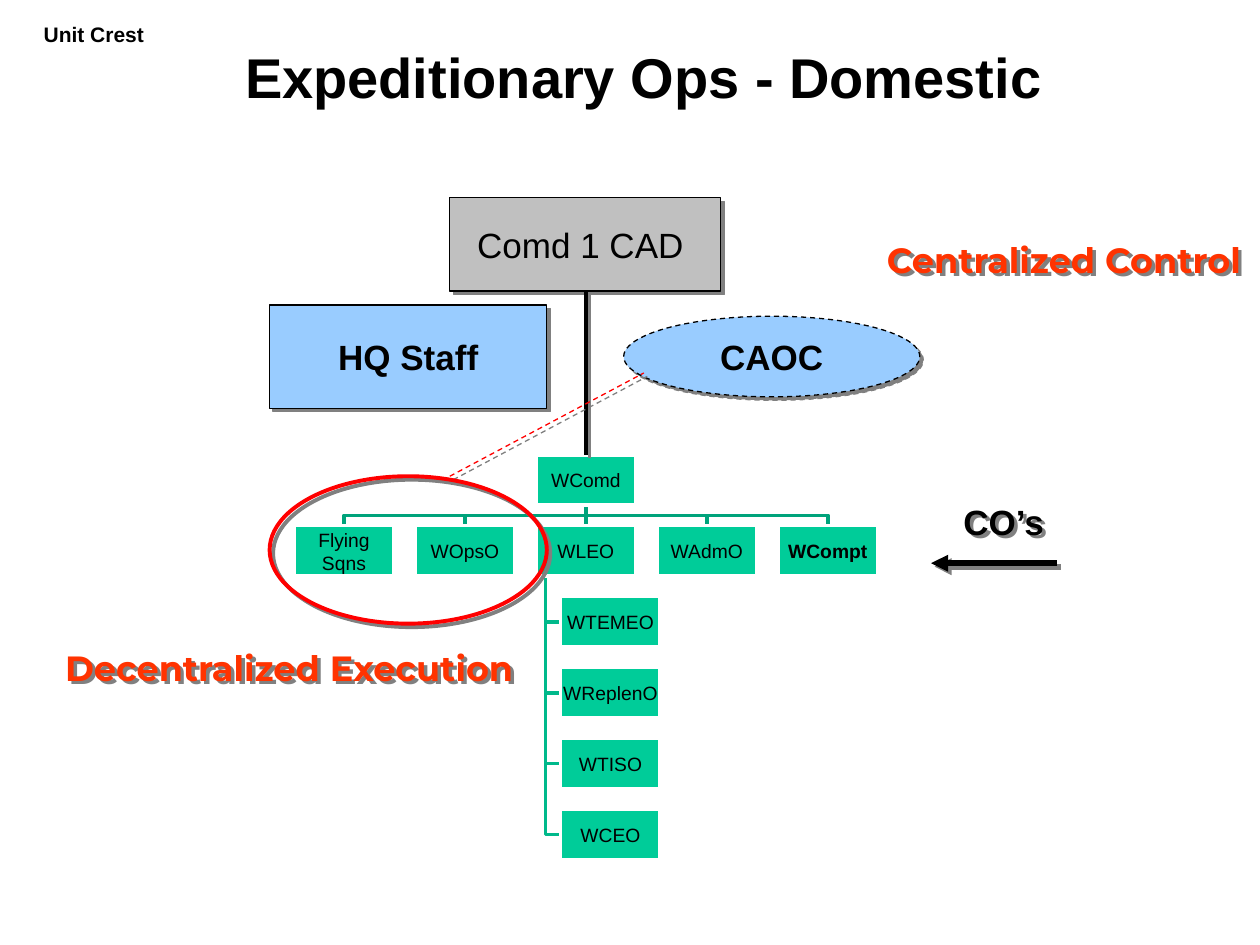
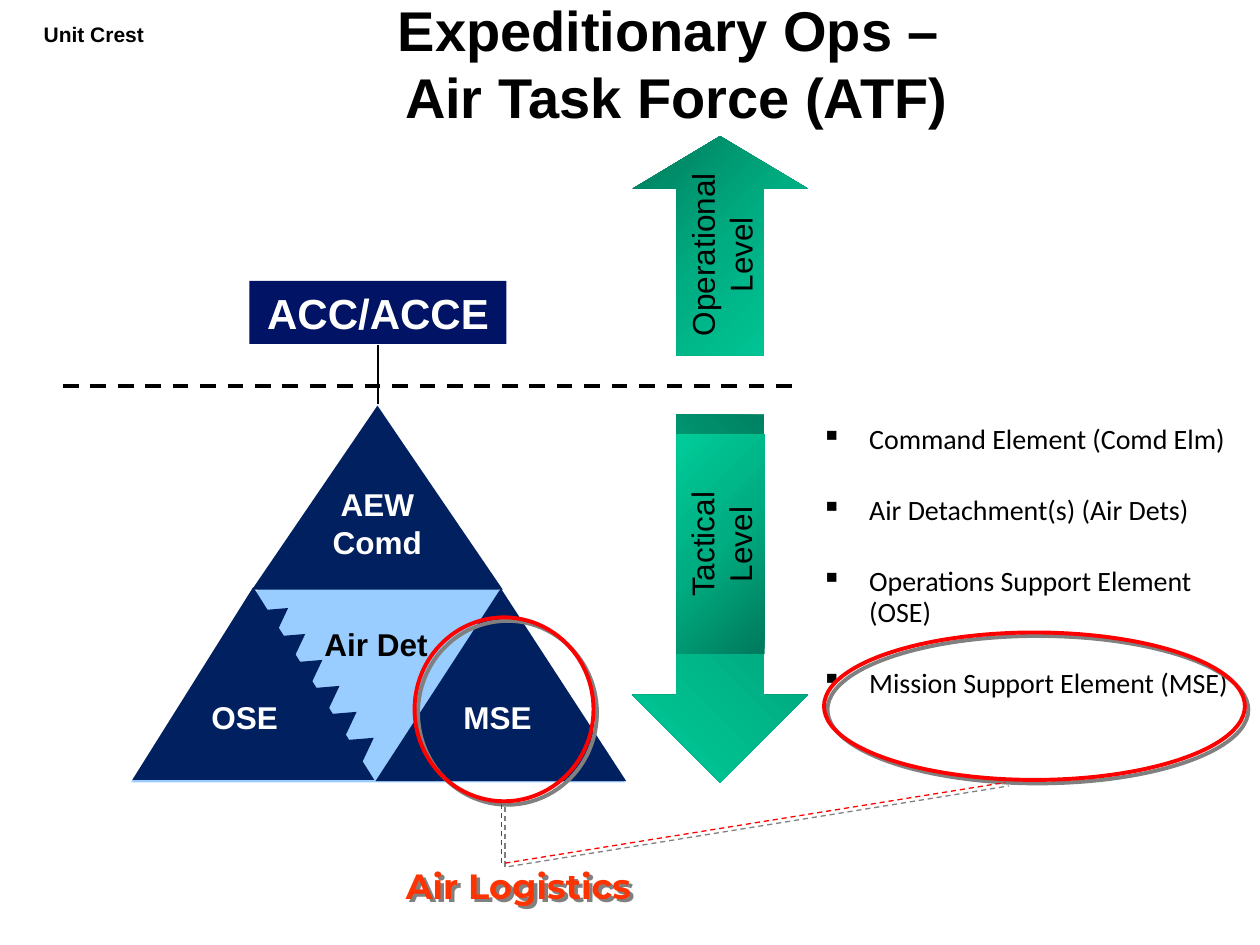
from copy import deepcopy
from dataclasses import dataclass

from lxml import etree
from pptx import Presentation
from pptx.dml.color import RGBColor
from pptx.enum.dml import MSO_LINE
from pptx.enum.shapes import MSO_CONNECTOR, MSO_SHAPE
from pptx.enum.text import MSO_ANCHOR, MSO_AUTO_SIZE, PP_ALIGN
from pptx.oxml.ns import qn
from pptx.util import Inches, Pt

RECTANGLE, ELLIPSE = MSO_SHAPE.RECTANGLE, MSO_SHAPE.OVAL
TRIANGLE, UP_ARROW = MSO_SHAPE.ISOSCELES_TRIANGLE, MSO_SHAPE.UP_ARROW
STRAIGHT, DASH = MSO_CONNECTOR.STRAIGHT, MSO_LINE.DASH
LEFT, CENTER = PP_ALIGN.LEFT, PP_ALIGN.CENTER
TOP, MIDDLE = MSO_ANCHOR.TOP, MSO_ANCHOR.MIDDLE

# All places and lengths are cells of a square grid laid over the slide.
COLUMNS, ROWS = 100, 75
CELL = Inches(0.1)


@dataclass(frozen=True)
class Theme:
    black: str = "000000"
    white: str = "FFFFFF"
    grey: str = "C0C0C0"
    shadow: str = "808080"
    sky: str = "99CCFF"
    navy: str = "002060"
    deep_blue: str = "001364"
    green: str = "00CC99"
    trunk: str = "00A37B"
    branch: str = "00B98B"
    red: str = "FF0000"
    callout: str = "FF3300"
    gradient: tuple = ("00795B", "00AC81", "00CC99")
    font: str = "Arial"
    list_font: str = "Calibri"
    callout_font: str = "Montserrat"
    title_size: float = 32
    heading_size: float = 24
    large_size: float = 20
    label_size: float = 18
    list_size: float = 16
    crest_size: float = 12
    unit_size: float = 11
    thin: float = 0.75
    medium: float = 2
    ring: float = 2.25
    arrow: float = 3.25


THEME = Theme()


def cells(*values):
    return [round(value * CELL) for value in values]


def set_effects(shape, shadow):
    """Give the shape an offset shadow, or an empty effect list."""
    properties = shape._element.spPr
    effects = etree.SubElement(properties, qn("a:effectLst"))
    if shadow:
        outer = etree.SubElement(effects, qn("a:outerShdw"), dist=str(Pt(2.8)),
                                 dir="2700000", algn="ctr", rotWithShape="0")
        etree.SubElement(outer, qn("a:srgbClr"), val=THEME.shadow)


def set_line(line, color, width, dash=None):
    if color is None:
        line.fill.background()
        return
    line.color.rgb = RGBColor.from_string(color)
    line.width = Pt(width)
    if dash:
        line.dash_style = dash


def set_gradient(shape, angle):
    shape.fill.gradient()
    shape.fill.gradient_angle = angle
    stop_list = shape._element.spPr.find(".//" + qn("a:gsLst"))
    stop_list.insert(1, deepcopy(stop_list[0]))
    for index, stop in enumerate(shape.fill.gradient_stops):
        stop.position = index / 2
        stop.color.rgb = RGBColor.from_string(THEME.gradient[index])


def set_bullet(paragraph, indent):
    properties = paragraph._p.get_or_add_pPr()
    properties.set("marL", str(indent))
    properties.set("indent", str(-indent))
    etree.SubElement(properties, qn("a:buChar"), char="▪")


def write_text(shape, text, size=THEME.large_size, font=THEME.font, color=THEME.black,
               bold=False, align=CENTER, anchor=TOP, wrap=True, margin=None,
               bullet_indent=None, line_spacing=None, gap=None):
    """Write one paragraph per line of text; gap is the space between them."""
    frame = shape.text_frame
    frame.word_wrap = wrap
    frame.auto_size = MSO_AUTO_SIZE.NONE if wrap else MSO_AUTO_SIZE.SHAPE_TO_FIT_TEXT
    frame.vertical_anchor = anchor
    if margin is not None:
        frame.margin_left = frame.margin_right = Inches(margin)
        frame.margin_top = frame.margin_bottom = Inches(margin)
    for index, line in enumerate(text.split("\n")):
        paragraph = frame.add_paragraph() if index else frame.paragraphs[0]
        paragraph.text = line
        paragraph.alignment = align
        if line_spacing:
            paragraph.line_spacing = line_spacing
        paragraph.space_before = Pt(gap if gap and index else 0)
        if bullet_indent:
            set_bullet(paragraph, bullet_indent)
        for run in paragraph.runs:
            run.font.name, run.font.size, run.font.bold = font, Pt(size), bold
            run.font.color.rgb = RGBColor.from_string(color)


def add_shape(slide, kind, area, fill=None, line=None, width=THEME.thin, dash=None,
              shadow=False, rotation=0, gradient_angle=None):
    shape = slide.shapes.add_shape(kind, *cells(*area))
    shape.rotation = rotation
    if gradient_angle is not None:
        set_gradient(shape, gradient_angle)
    elif fill:
        shape.fill.solid()
        shape.fill.fore_color.rgb = RGBColor.from_string(fill)
    else:
        shape.fill.background()
    set_line(shape.line, line, width, dash)
    set_effects(shape, shadow)
    return shape


def add_label(slide, text, area, shadow=False, rotation=0, **text_format):
    label = slide.shapes.add_textbox(*cells(*area))
    label.rotation = rotation
    set_effects(label, shadow)
    write_text(label, text, **text_format)


def add_callout(slide, text, area):
    add_label(slide, text, area, shadow=True, wrap=False, bold=True,
              font=THEME.callout_font, color=THEME.callout)


def add_line(slide, start, end, color=THEME.black, width=THEME.thin, dash=None,
             shadow=False, arrow=False):
    connector = slide.shapes.add_connector(STRAIGHT, *cells(*start, *end))
    set_line(connector.line, color, width, dash)
    if arrow:
        outline = connector._element.spPr.get_or_add_ln()
        etree.SubElement(outline, qn("a:tailEnd"), type="triangle")
    set_effects(connector, shadow)


def add_polyline(slide, points, color):
    corners = [cells(*point) for point in points]
    builder = slide.shapes.build_freeform(*corners[0])
    builder.add_line_segments(corners[1:], close=False)
    shape = builder.convert_to_shape()
    shape.fill.background()
    set_line(shape.line, color, THEME.medium)
    set_effects(shape, False)


def add_ring(slide, area):
    add_shape(slide, ELLIPSE, area, line=THEME.red, width=THEME.ring, shadow=True)


def add_red_link(slide, start, end):
    add_line(slide, start, end, THEME.red, dash=DASH, shadow=True)


def start_slide(presentation, title, left, top):
    slide = presentation.slides.add_slide(presentation.slide_layouts[5])
    placeholder = slide.shapes.title
    (placeholder.left, placeholder.top,
     placeholder.width, placeholder.height) = cells(left, top, 85, 7.5)
    write_text(placeholder, title, size=THEME.title_size, bold=True, anchor=MIDDLE)
    add_label(slide, "Unit Crest", (1.5, 1.2, 11.9, 14.2), size=THEME.crest_size, bold=True)
    return slide


def add_unit(slide, name, left, top, size, bold=False):
    box = add_shape(slide, RECTANGLE, (left, top, *size), THEME.green, THEME.white,
                    THEME.medium)
    write_text(box, name, size=THEME.unit_size, bold=bold, anchor=MIDDLE, margin=0.01)


def add_wing_chart(slide):
    """Draw the wing commander, a row of officers and the column below WLEO."""
    officers = ["Flying Sqns", "WOpsO", "WLEO", "WAdmO", "WCompt"]
    logistics = ["WTEMEO", "WReplenO", "WTISO", "WCEO"]
    width, height = size = (7.9, 4)
    column_step, row_step = 9.6, 5.63
    center, commander_top = 46.5, 36.1
    officer_top = commander_top + row_step
    commander_bottom, rail = commander_top + height, 40.9
    stem, list_left = 43.3, 44.5

    officer_centers = [center + (index - 2) * column_step for index in range(len(officers))]
    list_tops = [officer_top + (index + 1) * row_step for index in range(len(logistics))]
    for x in officer_centers:
        if x == center:
            add_line(slide, (x, commander_bottom), (x, officer_top), THEME.trunk, THEME.medium)
        else:
            add_polyline(slide, [(center, commander_bottom), (center, rail), (x, rail),
                                 (x, officer_top)], THEME.trunk)
    for top in list_tops:
        middle = top + height / 2
        add_polyline(slide, [(stem, officer_top + height), (stem, middle),
                             (list_left, middle)], THEME.branch)

    add_unit(slide, "WComd", center - width / 2, commander_top, size)
    for name, x in zip(officers, officer_centers):
        add_unit(slide, name, x - width / 2, officer_top, size, bold=name == "WCompt")
    for name, top in zip(logistics, list_tops):
        add_unit(slide, name, list_left, top, size)


def build_domestic(presentation):
    slide = start_slide(presentation, "Expeditionary Ops - Domestic", 8.6, 2.3)
    add_wing_chart(slide)

    command = add_shape(slide, RECTANGLE, (35.7, 15.7, 21.5, 7.4), THEME.grey,
                        THEME.black, shadow=True)
    write_text(command, "Comd 1 CAD ", anchor=MIDDLE)
    add_line(slide, (46.5, 23.1), (46.5, 36.1), width=THEME.medium, shadow=True)
    operations = add_shape(slide, ELLIPSE, (49.5, 25.1, 23.5, 6.4), THEME.sky,
                           THEME.black, dash=DASH, shadow=True)
    write_text(operations, "CAOC", bold=True, anchor=MIDDLE)
    staff = add_shape(slide, RECTANGLE, (21.4, 24.2, 22, 8.2), THEME.sky,
                      THEME.black, shadow=True)
    write_text(staff, "HQ Staff", bold=True, anchor=MIDDLE)

    add_red_link(slide, (35.7, 37.8), (51.1, 29.6))
    add_line(slide, (83.9, 44.7), (73.9, 44.7), width=THEME.arrow, shadow=True, arrow=True)
    add_label(slide, "CO’s", (75.4, 39.2, 8.5, 4.4), shadow=True, bold=True, wrap=False)
    add_ring(slide, (21.4, 37.8, 22, 11.7))
    add_callout(slide, "Centralized Control", (68.6, 18.4, 31.7, 4.4))
    add_callout(slide, "Decentralized Execution", (2.7, 50.8, 40.5, 4.4))


def add_level_arrows(slide):
    operational = add_shape(slide, UP_ARROW, (50.2, 10.8, 13.9, 17.4), gradient_angle=315)
    operational.adjustments[1] = 0.3
    add_label(slide, "Operational\vLevel", (48.6, 16.7, 17.3, 7), rotation=270,
              size=THEME.label_size)
    tactical = add_shape(slide, UP_ARROW, (50.2, 32.9, 13.9, 29.2), rotation=180,
                         gradient_angle=45)
    tactical.adjustments[1] = 0.5
    panel = add_shape(slide, RECTANGLE, (48.5, 39.7, 17.4, 7), rotation=270,
                      gradient_angle=45)
    write_text(panel, "Tactical\vLevel", size=THEME.label_size)


def add_force_pyramid(slide):
    add_shape(slide, TRIANGLE, (10.4, 32.2, 39.2, 29.9), THEME.sky)
    for area in [(20, 32.2, 19.9, 14.6), (10.5, 46.6, 19.2, 15.3), (29.8, 46.7, 19.9, 15.3)]:
        add_shape(slide, TRIANGLE, area, THEME.navy)
    for tooth in range(6):
        add_shape(slide, TRIANGLE, (20.3 + tooth * 1.36, 47.7 + tooth * 2.06, 3, 2.6),
                  THEME.navy, rotation=55.3)
    labels = [("AEW\vComd", (23.1, 38, 13.7, 7), THEME.white, CENTER),
              ("Air Det", (24, 49.1, 11.7, 4), THEME.black, CENTER),
              ("OSE", (15.8, 54.9, 8.4, 4), THEME.white, LEFT),
              ("MSE", (35.8, 54.9, 8.2, 4), THEME.white, LEFT)]
    for text, area, color, align in labels:
        add_label(slide, text, area, size=THEME.label_size, color=color, bold=True,
                  align=align)


def build_task_force(presentation):
    slide = start_slide(presentation, "Expeditionary Ops – \nAir Task Force (ATF)", 11.2, 1.2)
    elements = ["Command Element (Comd Elm)", "Air Detachment(s) (Air Dets)",
                "Operations Support Element (OSE)", "Mission Support Element (MSE)"]
    add_label(slide, "\n".join(elements), (64.2, 33.3, 35.8, 30), size=THEME.list_size,
              font=THEME.list_font, align=LEFT, bullet_indent=Inches(0.38),
              line_spacing=0.9, gap=23.3)

    headquarters = add_shape(slide, RECTANGLE, (19.8, 22.3, 20.4, 5), THEME.deep_blue)
    write_text(headquarters, "ACC/ACCE", size=THEME.heading_size, color=THEME.white,
               bold=True, anchor=MIDDLE)
    add_line(slide, (30, 32.1), (30, 27.4))
    add_line(slide, (5, 30.6), (63.7, 30.6), width=THEME.ring, dash=DASH)
    add_level_arrows(slide)
    add_force_pyramid(slide)

    add_ring(slide, (32.9, 49, 14.2, 14.6))
    add_callout(slide, "Air Logistics", (30.5, 68.1, 21.3, 4.4))
    add_red_link(slide, (39.8, 68.5), (39.8, 63.6))
    add_ring(slide, (65.4, 50.2, 33.4, 11.7))
    add_red_link(slide, (40.1, 68.5), (79.8, 62.1))


def main():
    presentation = Presentation()
    presentation.slide_width, presentation.slide_height = cells(COLUMNS, ROWS)
    build_domestic(presentation)
    build_task_force(presentation)
    presentation.save("out.pptx")


if __name__ == "__main__":
    main()
